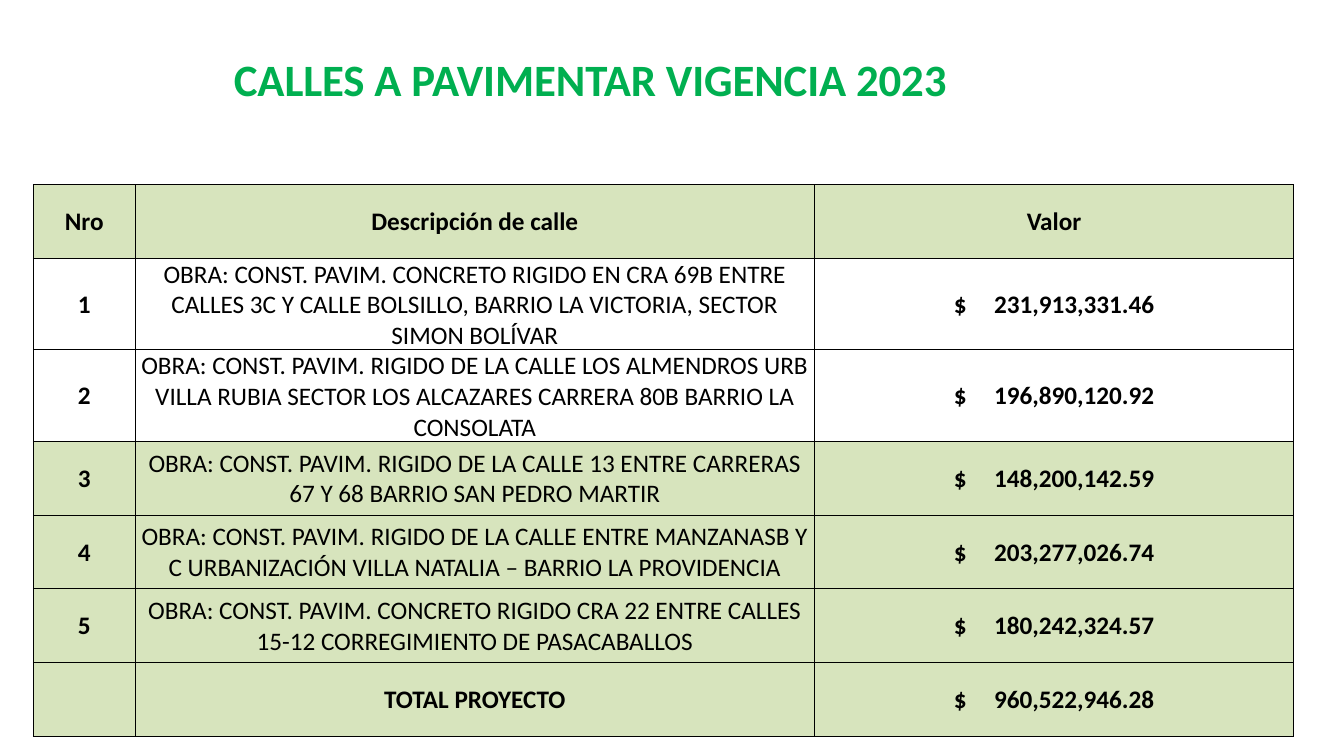
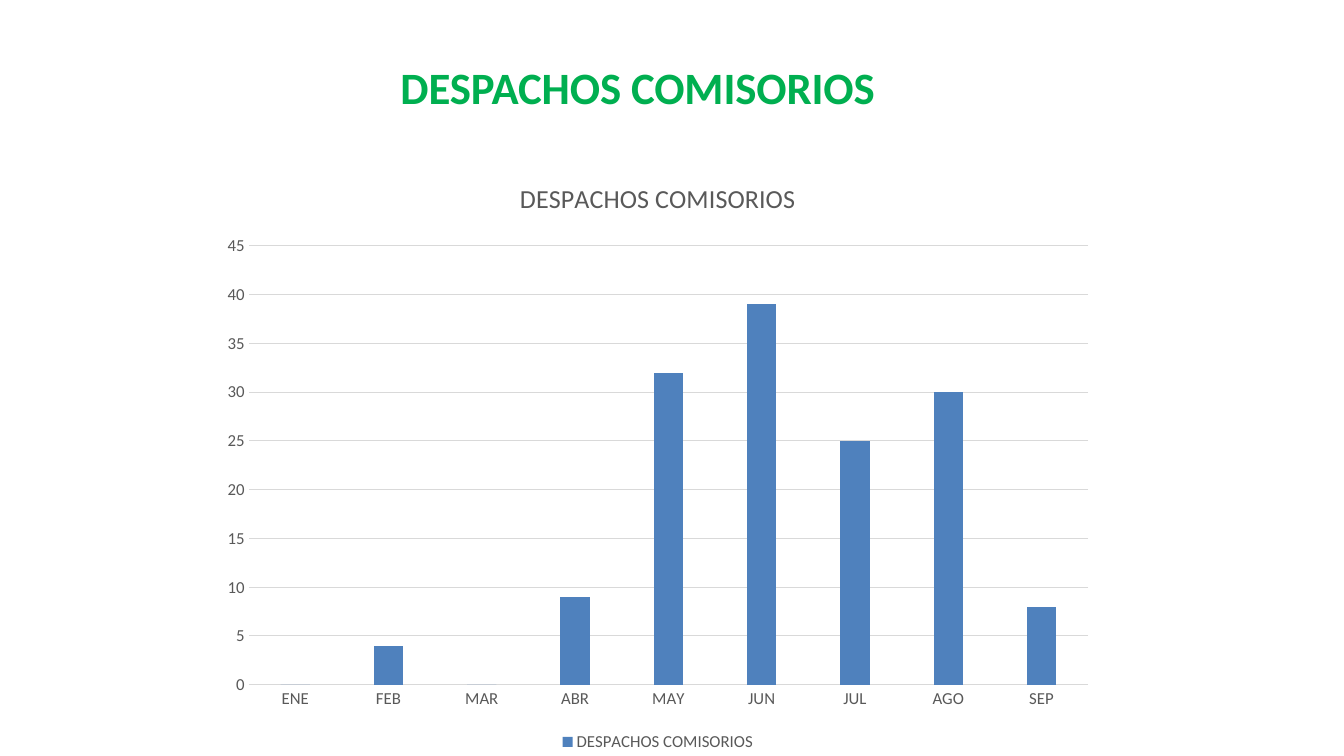
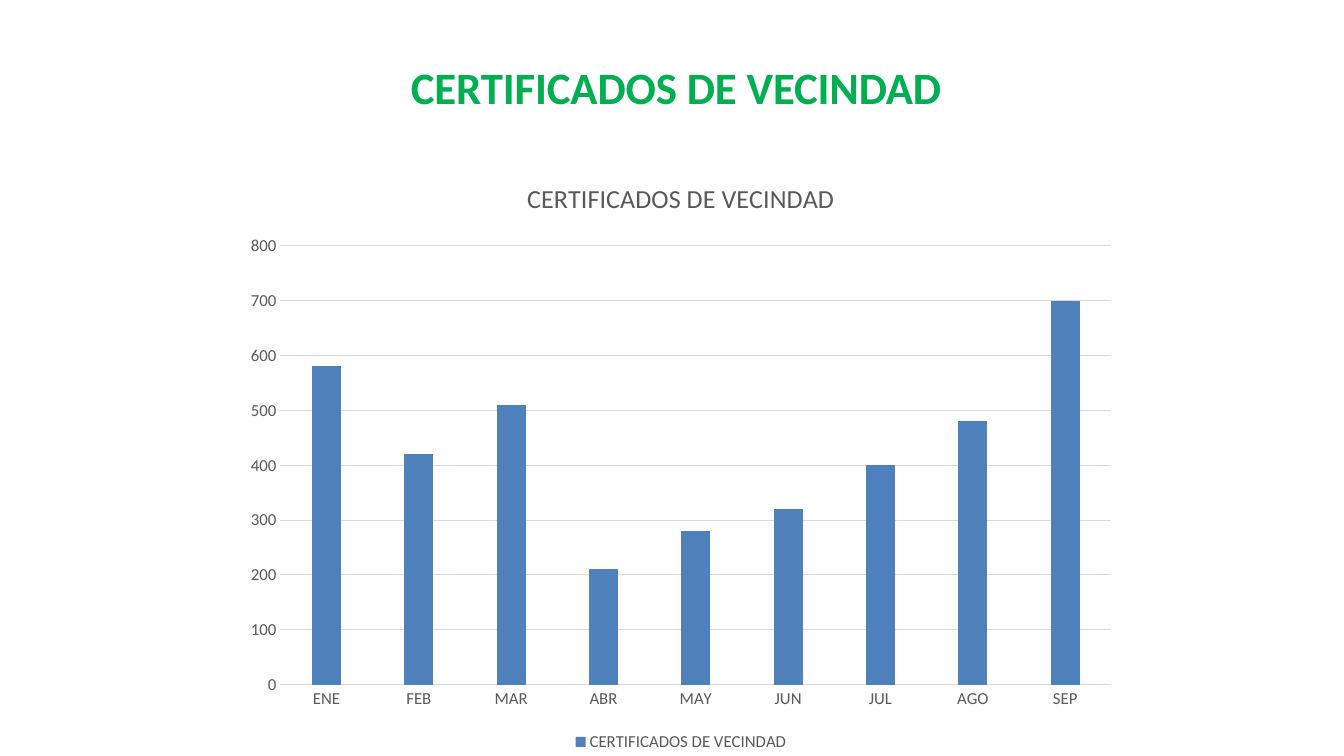
from lxml.etree import SubElement
from pptx import Presentation
from pptx.chart.data import CategoryChartData
from pptx.dml.color import RGBColor
from pptx.enum.chart import XL_CHART_TYPE as ChartType, XL_LEGEND_POSITION as LegendPosition, XL_TICK_MARK as TickMark
from pptx.enum.text import MSO_ANCHOR as Anchor, MSO_AUTO_SIZE as AutoSize, PP_ALIGN as Align
from pptx.oxml.ns import qn
from pptx.util import Emu, Pt

EMU_PER_PX = 9144  # 100 px to the inch
FONT = "Calibri"
GREEN, PALE_GREEN = "00AF50", "D7E4BD"
BLACK, GREY, LIGHT_GREY, BLUE = "000000", "595959", "D9D9D9", "4F81BD"
TITLE_ONLY = 5

MONTHS = ["ENE", "FEB", "MAR", "ABR", "MAY", "JUN", "JUL", "AGO", "SEP"]
COLUMN_WIDTHS = [101, 674, 475]
ROW_HEIGHTS = [73, 85, 85, 73, 73, 73, 73]
WHITE_ROWS = (1, 2)
HEADER_ROW, TOTAL_ROW = 0, 6
VALUE_COLUMN = 2
STREETS = [
    ("Nro", "Descripción de calle", "Valor"),
    ("1", "OBRA: CONST. PAVIM. CONCRETO RIGIDO EN CRA 69B ENTRE CALLES 3C Y CALLE BOLSILLO, "
          "BARRIO LA VICTORIA, SECTOR SIMON BOLÍVAR", "$\t231,913,331.46"),
    ("2", "OBRA: CONST. PAVIM. RIGIDO DE LA CALLE LOS ALMENDROS URB VILLA RUBIA SECTOR "
          "LOS ALCAZARES CARRERA 80B BARRIO LA CONSOLATA", "$\t196,890,120.92"),
    ("3", "OBRA: CONST. PAVIM. RIGIDO DE LA CALLE 13 ENTRE CARRERAS 67 Y 68 "
          "BARRIO SAN PEDRO MARTIR", "$\t148,200,142.59"),
    ("4", "OBRA: CONST. PAVIM. RIGIDO DE LA CALLE ENTRE MANZANASB Y C URBANIZACIÓN "
          "VILLA NATALIA – BARRIO LA PROVIDENCIA", "$\t203,277,026.74"),
    ("5", "OBRA: CONST. PAVIM. CONCRETO RIGIDO CRA 22 ENTRE CALLES 15-12 "
          "CORREGIMIENTO DE PASACABALLOS", "$\t180,242,324.57"),
    ("", "TOTAL PROYECTO", "$\t960,522,946.28"),
]


def px(length):
    return Emu(length * EMU_PER_PX)


def rgb(color):
    return RGBColor.from_string(color)


def format_font(font, size, color, bold=False):
    font.name = FONT
    font.size = Pt(size)
    font.bold = bold
    font.color.rgb = rgb(color)


def add_titled_slide(presentation, text, left, top, width, align=Align.CENTER):
    slide = presentation.slides.add_slide(presentation.slide_layouts[TITLE_ONLY])
    title = slide.shapes.title
    title.left, title.top, title.width, title.height = px(left), px(top), px(width), px(55)
    frame = title.text_frame
    frame.text = text
    frame.auto_size = AutoSize.SHAPE_TO_FIT_TEXT
    frame.vertical_anchor = Anchor.TOP
    frame.margin_left = frame.margin_right = frame.margin_bottom = 0
    frame.margin_top = px(1)
    paragraph = frame.paragraphs[0]
    paragraph.alignment = align
    run = paragraph.runs[0]
    format_font(run.font, 32, GREEN, bold=True)
    run.font._element.set("spc", "-10")
    return slide


def add_borders(cell):
    properties = cell._tc.get_or_add_tcPr()
    for side in ("lnL", "lnR", "lnT", "lnB"):
        line = SubElement(properties, qn(f"a:{side}"), w=str(Pt(0.5)))
        fill = SubElement(line, qn("a:solidFill"))
        SubElement(fill, qn("a:srgbClr"), val=BLACK)


def align_amount(paragraph):
    """Put the currency sign and the amount on two fixed positions by a hanging indent."""
    paragraph.alignment = Align.LEFT
    properties = paragraph._p.get_or_add_pPr()
    properties.set("marL", str(px(177)))
    properties.set("indent", str(px(-40)))


def fill_cell(cell, text, bold, color):
    cell.vertical_anchor = Anchor.MIDDLE
    cell.margin_left = cell.margin_right = cell.margin_top = px(1)
    cell.margin_bottom = 0
    add_borders(cell)
    if color:
        cell.fill.solid()
        cell.fill.fore_color.rgb = rgb(color)
    else:
        cell.fill.background()
    paragraph = cell.text_frame.paragraphs[0]
    paragraph.text = text
    paragraph.alignment = Align.CENTER
    if text.startswith("$"):
        align_amount(paragraph)
    for run in paragraph.runs:
        format_font(run.font, 18, BLACK, bold)


def add_street_table(slide):
    table = slide.shapes.add_table(
        len(ROW_HEIGHTS), len(COLUMN_WIDTHS), px(33), px(183),
        px(sum(COLUMN_WIDTHS)), px(sum(ROW_HEIGHTS))).table
    table.horz_banding = False
    for column, width in zip(table.columns, COLUMN_WIDTHS):
        column.width = px(width)
    for row_index, texts in enumerate(STREETS):
        table.rows[row_index].height = px(ROW_HEIGHTS[row_index])
        color = None if row_index in WHITE_ROWS else PALE_GREEN
        for column_index, text in enumerate(texts):
            bold = column_index != 1 or row_index in (HEADER_ROW, TOTAL_ROW)
            fill_cell(table.cell(row_index, column_index), text, bold, color)


def format_line(line, color):
    line.color.rgb = rgb(color)
    line.width = Pt(0.75)


def add_month_chart(slide, name, values, left):
    data = CategoryChartData()
    data.categories = MONTHS
    data.add_series(name, values)
    chart = slide.shapes.add_chart(
        ChartType.COLUMN_CLUSTERED, px(left), px(157), px(889), px(593), data).chart
    format_font(chart.font, 10, BLACK)

    chart.has_title = True
    title_frame = chart.chart_title.text_frame
    title_frame.text = name
    format_font(title_frame.paragraphs[0].runs[0].font, 18.6, GREY)
    chart.chart_title.include_in_layout = False

    chart.has_legend = True
    chart.legend.position = LegendPosition.BOTTOM
    chart.legend.include_in_layout = False
    format_font(chart.legend.font, 12, GREY)

    for axis in (chart.category_axis, chart.value_axis):
        axis.major_tick_mark = axis.minor_tick_mark = TickMark.NONE
        format_font(axis.tick_labels.font, 12, GREY)
    format_line(chart.category_axis.format.line, LIGHT_GREY)
    chart.value_axis.format.line.fill.background()
    format_line(chart.value_axis.major_gridlines.format.line, LIGHT_GREY)

    plot = chart.plots[0]
    plot.vary_by_categories = False
    plot.gap_width = 219
    plot.overlap = -27
    bar_fill = plot.series[0].format.fill
    bar_fill.solid()
    bar_fill.fore_color.rgb = rgb(BLUE)


def main():
    presentation = Presentation()
    presentation.slide_width, presentation.slide_height = px(1333), px(750)

    slide = add_titled_slide(presentation, "CALLES A PAVIMENTAR VIGENCIA 2023", 232, 50, 853, Align.LEFT)
    add_street_table(slide)

    slide = add_titled_slide(presentation, "DESPACHOS COMISORIOS", 206, 58, 853)
    add_month_chart(slide, "DESPACHOS COMISORIOS", [0, 4, 0, 9, 32, 39, 25, 30, 8], 208)

    slide = add_titled_slide(presentation, "CERTIFICADOS DE VECINDAD", 37, 58, 1267)
    add_month_chart(slide, "CERTIFICADOS DE VECINDAD",
                    [580, 420, 510, 210, 280, 320, 400, 480, 700], 231)

    presentation.save("out.pptx")


if __name__ == "__main__":
    main()
